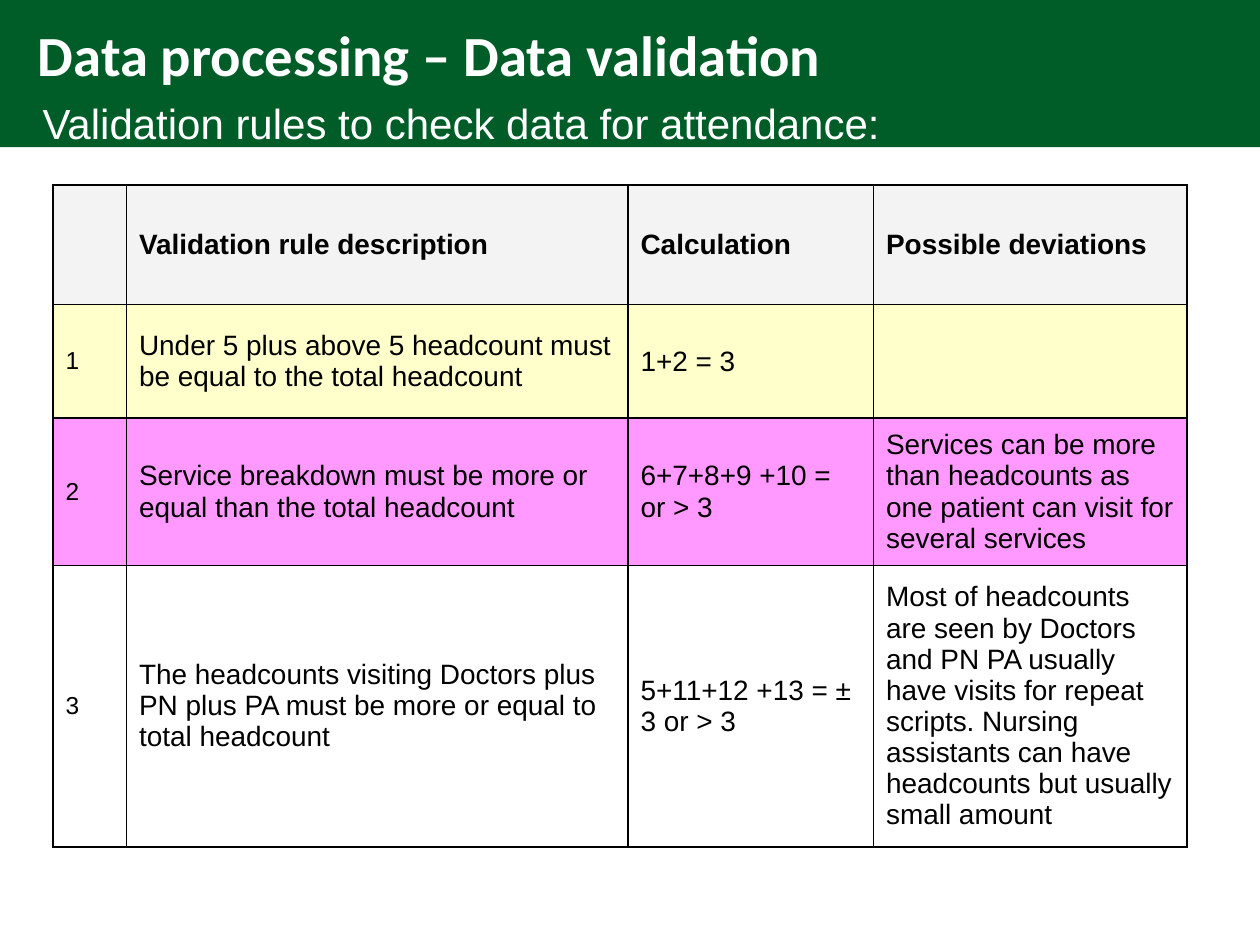
from dataclasses import dataclass

import pptx
import pptx.dml.color
import pptx.enum.shapes
import pptx.enum.text
import pptx.oxml
import pptx.oxml.ns
import pptx.util
from pptx.util import Cm

BLACK, WHITE, GREEN = "000000", "FFFFFF", "005D28"
WIDTHS = (1.48, 10.11, 4.95, 6.32)


@dataclass
class Row:
    height: float
    fill: str
    texts: tuple[str, ...]
    bold: bool = False


ROWS = (
    Row(2.41, "F3F3F3", ("", "Validation rule description", "Calculation",
                         "Possible deviations"), True),
    Row(2.29, "FFFFCC", (
        "1", "Under 5 plus above 5 headcount must be equal to the total headcount",
        "1+2 = 3", "")),
    Row(2.97, "FF99FF", (
        "2", "Service breakdown must be more or equal than the total headcount",
        "6+7+8+9 +10 = or > 3",
        "Services can be more than headcounts as one patient can visit for "
        "several services")),
    Row(4.9, "", (
        "3", "The headcounts visiting Doctors plus PN plus PA must be more or "
        "equal to total headcount",
        "5+11+12 +13 = ± 3 or > 3",
        "Most of headcounts are seen by Doctors and PN PA usually have visits "
        "for repeat scripts. Nursing assistants can have headcounts but usually "
        "small amount")),
)


def color(code: str) -> pptx.dml.color.RGBColor:
    return pptx.dml.color.RGBColor.from_string(code)


def style(frame, size: float, code: str, face: str = "Arial",
          bold: bool = False) -> None:
    for para in frame.paragraphs:
        para.alignment = pptx.enum.text.PP_ALIGN.LEFT
        font = para.font
        if para.runs:
            font = para.runs[0].font
        font.name, font.size, font.bold = face, pptx.util.Pt(size), bold
        font.color.rgb = color(code)


def paint(shape, code: str) -> None:
    if code:
        shape.fill.solid()
        shape.fill.fore_color.rgb = color(code)
    else:
        shape.fill.background()


def border(cell) -> None:
    """Draw thin black lines on all four sides, ahead of the cell's fill."""
    props = cell._tc.get_or_add_tcPr()
    for spot, side in enumerate(("lnL", "lnR", "lnT", "lnB")):
        line = pptx.oxml.parse_xml(
            f'<a:{side} {pptx.oxml.ns.nsdecls("a")} w="12700"><a:solidFill>'
            f'<a:srgbClr val="{BLACK}"/></a:solidFill></a:{side}>')
        props.insert(spot, line)


def add_band(slide) -> None:
    band = slide.shapes.add_shape(
        pptx.enum.shapes.MSO_SHAPE.RECTANGLE, 0, 0, Cm(25.4), Cm(2.97))
    band.shadow.inherit = False
    paint(band, GREEN)
    band.line.fill.background()
    slide.shapes._spTree.insert(2, band._element)  # behind the title


def add_heads(slide) -> None:
    title = slide.shapes.title
    title.left, title.top = Cm(0.51), Cm(0.28)
    title.width, title.height = Cm(22.86), Cm(1.17)
    frame = title.text_frame
    frame.text = "Data processing – Data validation"
    frame.auto_size = pptx.enum.text.MSO_AUTO_SIZE.NONE
    frame.vertical_anchor = pptx.enum.text.MSO_ANCHOR.TOP
    style(frame, 32.4, WHITE, "Calibri", True)

    box = slide.shapes.add_textbox(Cm(-0.36), Cm(1.85), Cm(24.41), Cm(1.4))
    frame = box.text_frame
    frame.word_wrap = True
    frame.text = "\tValidation rules to check data for attendance:"
    props = frame.paragraphs[0]._p.get_or_add_pPr()
    props.set("marL", str(Cm(0.97)))
    props.set("indent", str(Cm(-0.97)))
    style(frame, 24, WHITE)


def add_rules(slide) -> None:
    table = slide.shapes.add_table(
        len(ROWS), len(WIDTHS), Cm(1.07), Cm(3.73), Cm(sum(WIDTHS)),
        Cm(sum(row.height for row in ROWS))).table
    for col, width in zip(table.columns, WIDTHS):
        col.width = Cm(width)
    for r, row in enumerate(ROWS):
        table.rows[r].height = Cm(row.height)
        for c, text in enumerate(row.texts):
            cell = table.cell(r, c)
            cell.text_frame.text = text
            cell.vertical_anchor = pptx.enum.text.MSO_ANCHOR.MIDDLE
            style(cell.text_frame, 16 if c else 14, BLACK, bold=row.bold)
            paint(cell, row.fill)
            border(cell)


def main() -> None:
    deck = pptx.Presentation()
    deck.slide_width, deck.slide_height = Cm(25.4), Cm(19.05)
    slide = deck.slides.add_slide(deck.slide_layouts[5])
    add_band(slide)
    add_heads(slide)
    add_rules(slide)
    deck.save("out.pptx")


if __name__ == "__main__":
    main()
